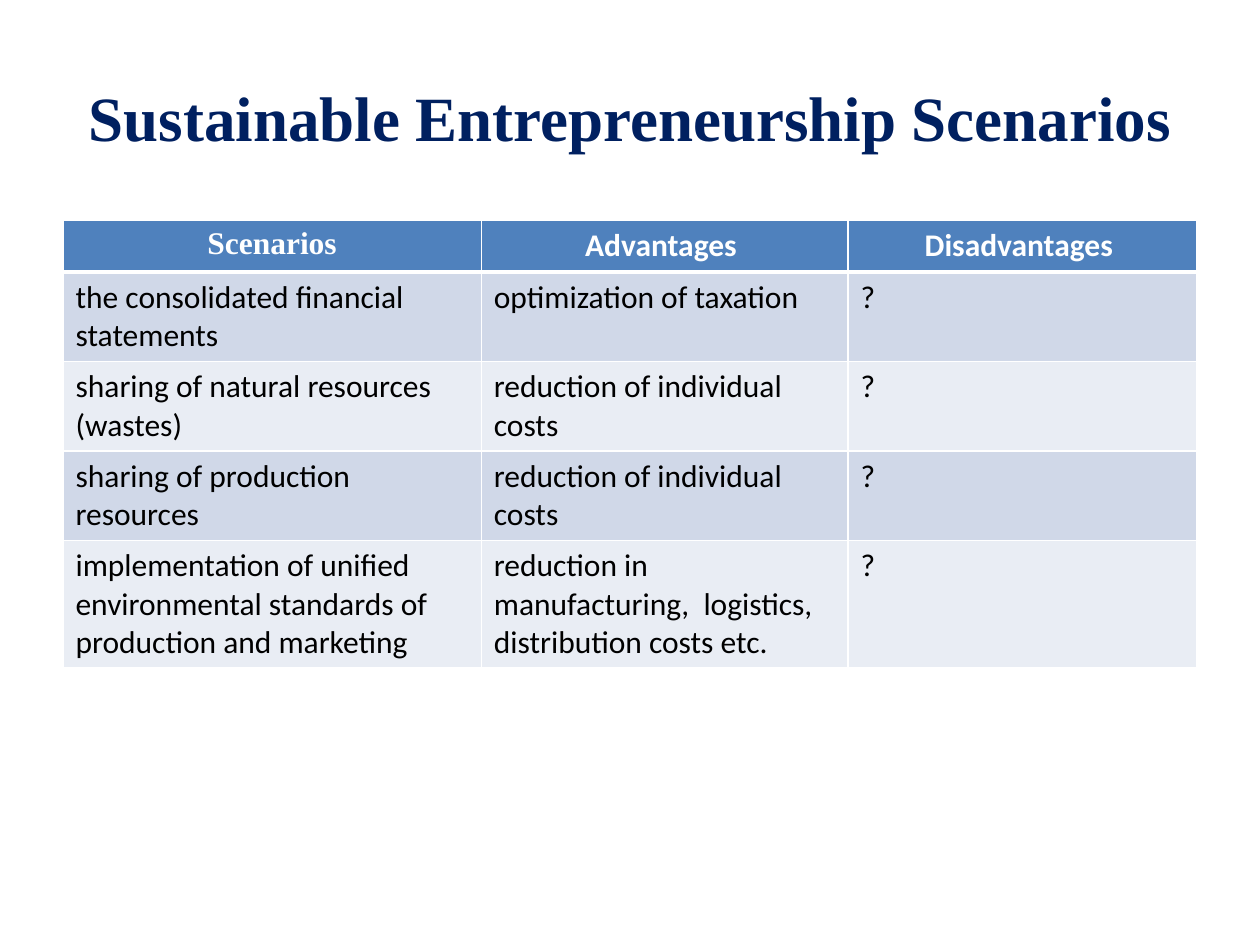
from typing import NamedTuple

from lxml.etree import SubElement
from pptx import Presentation
from pptx.dml.color import RGBColor
from pptx.enum.text import MSO_ANCHOR, PP_ALIGN
from pptx.oxml.ns import qn
from pptx.util import Inches, Pt

WIDE, HIGH = Inches(10), Inches(7.5)
EDGE = 0.05  # side margin, share of the slide's width
COLS = (3.32, 2.91, 2.77)  # column widths, inches
LINE, PAD = 0.3, 0.11  # height of a text line and of a row's margins, inches
NAVY, BLUE, WHITE, BLACK = "002060", "4F81BD", "FFFFFF", "000000"
BANDS = ("D0D8E8", "E9EDF4")
SERIF, SANS = "Times New Roman", "Calibri"


class Row(NamedTuple):
    scene: str
    gain: str
    loss: str = "?"
    lines: int = 2


HEAD = Row("Scenarios", "Advantages ", "Disadvantages ", lines=1)
BODY = (
    Row("the consolidated financial statements", "optimization of taxation"),
    Row("sharing of natural resources (wastes)", "reduction of individual costs"),
    Row("sharing of production resources", "reduction of individual costs"),
    Row("implementation of unified environmental standards of production and marketing",
        "reduction in manufacturing,  logistics, distribution costs etc.", lines=3),
)


def paint(code: str) -> RGBColor:
    return RGBColor.from_string(code)


def write(frame, text: str, *, size: int = 18, font: str = SANS,
          color: str = BLACK, bold: bool = False, align=PP_ALIGN.LEFT) -> None:
    frame.word_wrap = True
    para = frame.paragraphs[0]
    para.alignment = align
    run = para.add_run()
    run.text = text
    run.font.size, run.font.name, run.font.bold = Pt(size), font, bold
    run.font.color.rgb = paint(color)


def rule(cell, top: int = 1, base: int = 1) -> None:
    """Draw white borders round a cell, widths in points."""
    props = cell._tc.get_or_add_tcPr()
    for side, width in zip("LRTB", (1, 1, top, base)):
        line = SubElement(props, qn(f"a:ln{side}"), w=str(Pt(width)))
        fill = SubElement(line, qn("a:solidFill"))
        SubElement(fill, qn("a:srgbClr"), val=WHITE)


def title(slide, text: str) -> None:
    box = slide.shapes.add_textbox(int(EDGE * WIDE), int(0.04 * HIGH),
                                   int((1 - 2 * EDGE) * WIDE), Inches(1.25))
    box.text_frame.vertical_anchor = MSO_ANCHOR.MIDDLE
    write(box.text_frame, text, size=36, font=SERIF, color=NAVY, bold=True,
          align=PP_ALIGN.CENTER)


def grid(slide, rows: tuple[Row, ...]) -> None:
    tall = [LINE * row.lines + PAD for row in rows]
    table = slide.shapes.add_table(
        len(rows), len(COLS), int(EDGE * WIDE), Inches(1.75),
        Inches(sum(COLS)), Inches(sum(tall))).table
    for col, width in zip(table.columns, COLS):
        col.width = Inches(width)
    for r, row in enumerate(rows):
        table.rows[r].height = Inches(tall[r])
        head = r == 0
        for c, text in enumerate((row.scene, row.gain, row.loss)):
            cell = table.cell(r, c)
            # Thick rule between the header and the body
            rule(cell, top=3 if r == 1 else 1, base=3 if head else 1)
            cell.fill.solid()
            cell.fill.fore_color.rgb = paint(BLUE if head else BANDS[(r - 1) % 2])
            write(cell.text_frame, text, bold=head,
                  font=SERIF if head and c == 0 else SANS,
                  color=WHITE if head else BLACK,
                  align=PP_ALIGN.CENTER if head else PP_ALIGN.LEFT)


def main() -> None:
    deck = Presentation()
    deck.slide_width, deck.slide_height = WIDE, HIGH
    slide = deck.slides.add_slide(deck.slide_layouts[6])
    title(slide, "Sustainable Entrepreneurship Scenarios")
    grid(slide, (HEAD, *BODY))
    deck.save("out.pptx")


if __name__ == "__main__":
    main()
